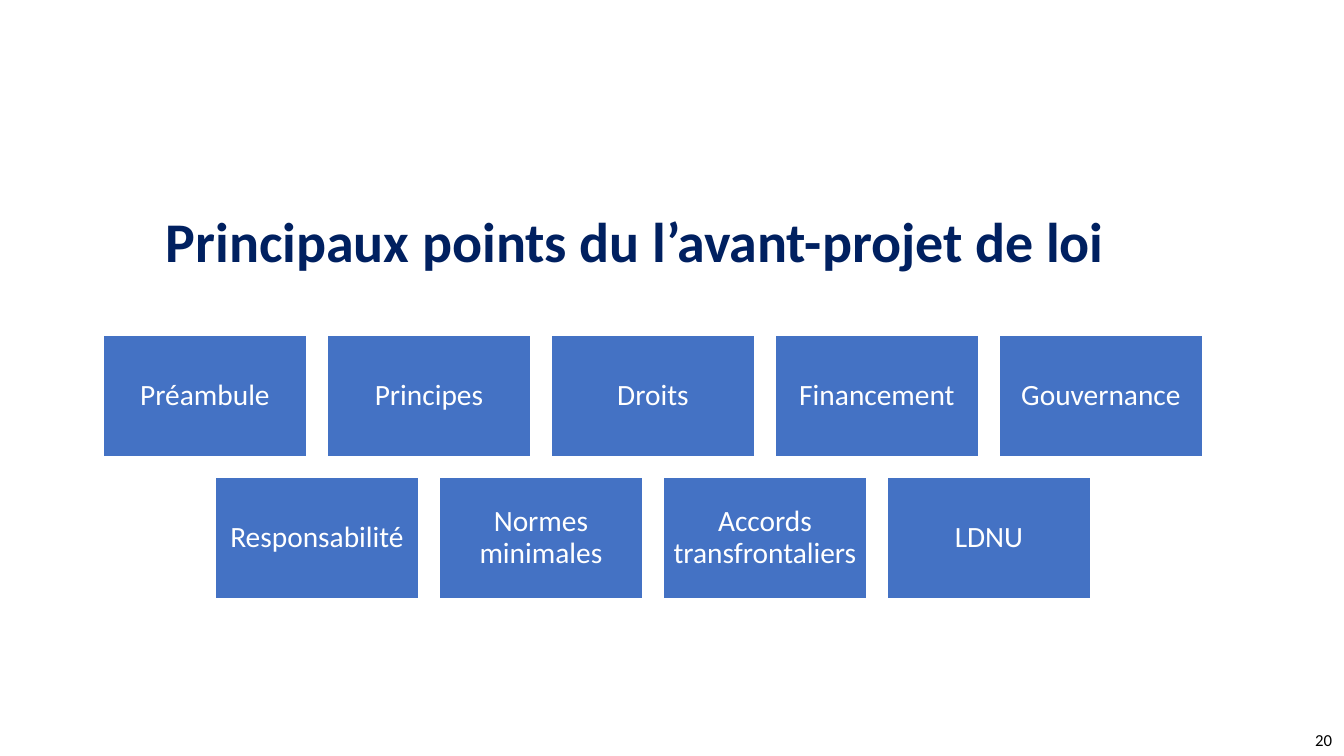
import pptx
import pptx.util
import pptx.dml.color
import pptx.enum.shapes
import pptx.enum.text

ALIGN = pptx.enum.text.PP_ALIGN
ANCHOR = pptx.enum.text.MSO_ANCHOR
COLORS = {"navy": "002060", "blue": "4472C4", "white": "FFFFFF", "black": "000000"}
FONT = "Calibri"
ROWS = [
    ["Préambule", "Principes", "Droits", "Financement", "Gouvernance"],
    ["Responsabilité", "Normes minimales", "Accords transfrontaliers", "LDNU"],
]


def px(n):
    return round(n * 914400 / 100.8)


def rgb(name):
    return pptx.dml.color.RGBColor.from_string(COLORS[name])


def write(sp, text, size, color, bold=False, align=ALIGN.CENTER,
          anchor=ANCHOR.MIDDLE, spacing=0.9, inset=None):
    tf = sp.text_frame
    tf.word_wrap = True
    tf.auto_size = pptx.enum.text.MSO_AUTO_SIZE.NONE
    tf.vertical_anchor = anchor
    if inset is not None:
        tf.margin_left = tf.margin_right = tf.margin_top = tf.margin_bottom = px(inset)
    p = tf.paragraphs[0]
    p.alignment = align
    p.line_spacing = spacing
    r = p.add_run()
    r.text = text
    r.font.name = FONT
    r.font.size = pptx.util.Pt(size)
    r.font.bold = bold
    r.font.color.rgb = rgb(color)


def add_title(s, x, y, w, h):
    sp = s.shapes.title
    sp.left, sp.top, sp.width, sp.height = px(x), px(y), px(w), px(h)
    write(sp, "Principaux points du l’avant-projet de loi", 40, "navy",
          bold=True, anchor=ANCHOR.TOP)


def add_cards(s, x, y, w, h, gap=20):
    columns = max(len(row) for row in ROWS)
    card_w = (w - gap * (columns - 1)) / columns
    card_h = (h - gap * (len(ROWS) - 1)) / len(ROWS)
    for i, row in enumerate(ROWS):
        # Shorter rows are centred in the box
        start = x + (columns - len(row)) * (card_w + gap) / 2
        for j, label in enumerate(row):
            sp = s.shapes.add_shape(
                pptx.enum.shapes.MSO_SHAPE.RECTANGLE,
                px(start + j * (card_w + gap)), px(y + i * (card_h + gap)),
                px(card_w), px(card_h))
            sp.shadow.inherit = False
            sp.fill.solid()
            sp.fill.fore_color.rgb = rgb("blue")
            sp.line.color.rgb = rgb("white")
            sp.line.width = pptx.util.Pt(1)
            write(sp, label, 21, "white", inset=9)


def add_page_number(s, x, y, w, h):
    sp = s.shapes.add_textbox(px(x), px(y), px(w), px(h))
    write(sp, "20", 12, "black", align=ALIGN.RIGHT, spacing=1.0)


def main():
    prs = pptx.Presentation()
    prs.slide_width, prs.slide_height = px(1344), px(756)
    s = prs.slides.add_slide(prs.slide_layouts[5])  # title only

    # Heading, topic cards, page number
    add_title(s, 76, 209, 1118, 103)
    add_cards(s, 103, 335, 1100, 264)
    add_page_number(s, 1051, 723, 291, 33)

    prs.save("out.pptx")


if __name__ == "__main__":
    main()
